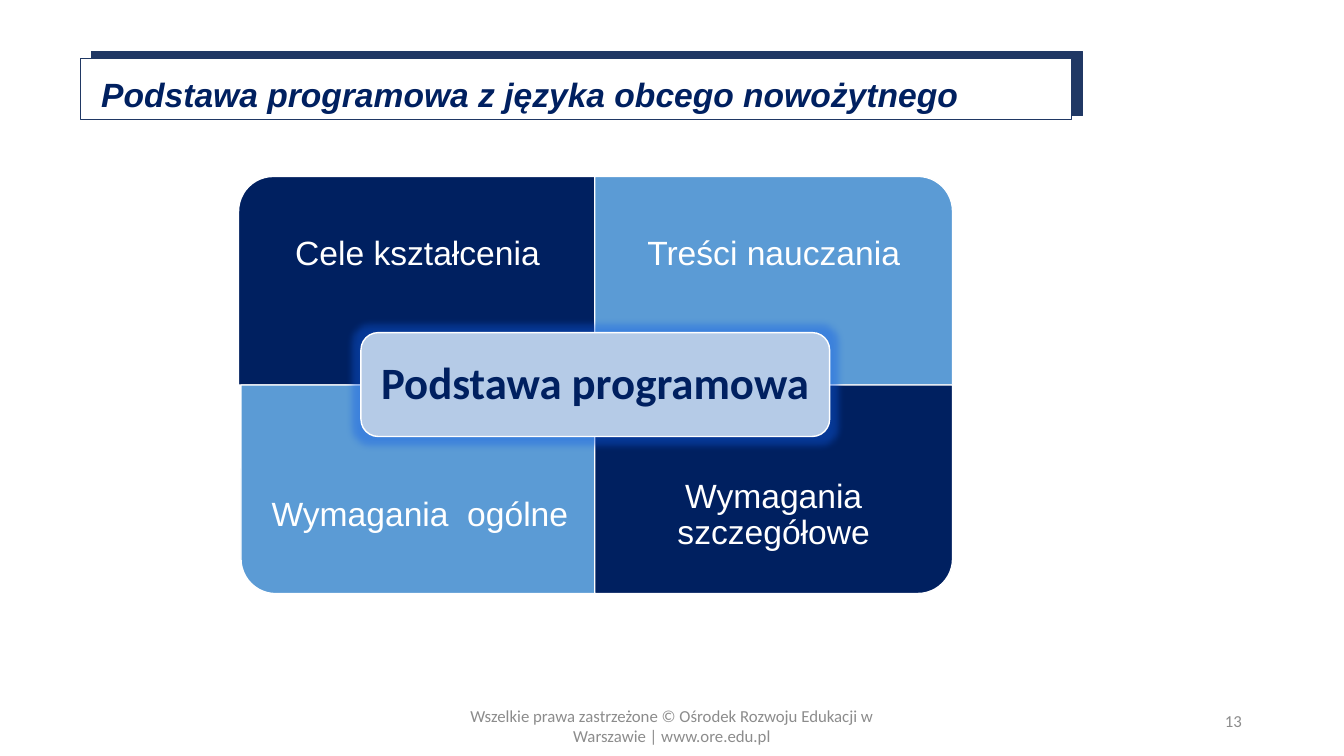
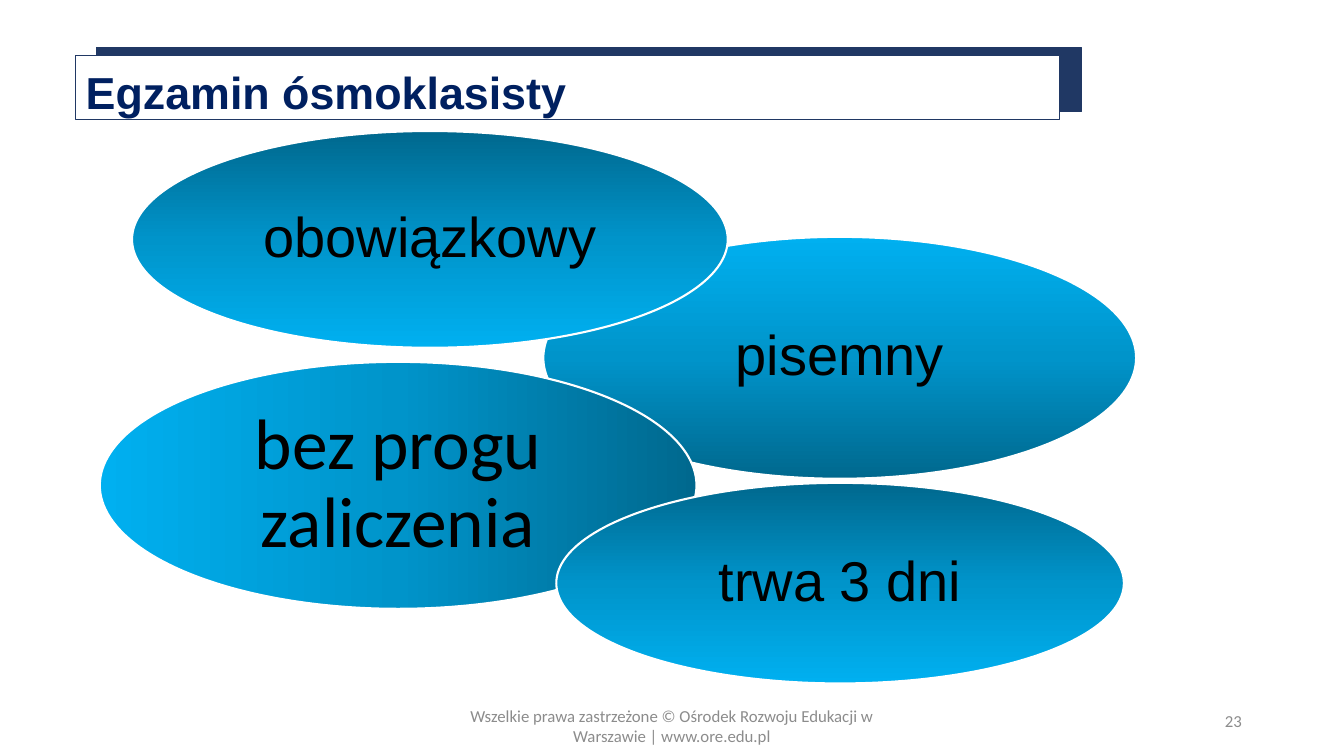
from copy import deepcopy
from dataclasses import dataclass

from lxml import etree
from pptx import Presentation
from pptx.dml.color import RGBColor
from pptx.enum.shapes import MSO_SHAPE
from pptx.enum.text import MSO_ANCHOR, MSO_AUTO_SIZE, PP_ALIGN
from pptx.oxml.ns import qn
from pptx.util import Pt


@dataclass(frozen=True)
class Theme:
    navy: str = "002060"
    band: str = "203864"
    blue: str = "5B9BD5"
    pale: str = "B5CBE7"
    glow: str = "0F5CE7"
    white: str = "FFFFFF"
    black: str = "000000"
    grey: str = "8C8C8C"
    gradient: tuple = ("00688E", "0094CA", "00B0F0")
    sans: str = "Arial"
    body: str = "Calibri"
    small: int = 12
    label: int = 24
    centre: int = 32
    oval: int = 40
    oval_large: int = 51


T = Theme()

# Content: boxes are (left, top, width, height) in points
FOOTER = "Wszelkie prawa zastrzeżone © Ośrodek Rozwoju Edukacji w Warszawie | www.ore.edu.pl"
FOOTER_BOX = (318, 500.4, 324, 28.8)
NUMBER_BOX = (678.2, 500.4, 216, 28.8)

CURRICULUM = {
    "title": "Podstawa programowa z języka obcego nowożytnego",
    "size": 24, "italic": True, "inset": (14.7, 11),
    "front": (57.6, 41.8, 707.8, 43.9), "back": (65.5, 36.7, 707.8, 46.1),
    "number": "13",
}
EXAM = {
    "title": "Egzamin ósmoklasisty",
    "size": 32, "italic": False, "inset": (7.2, 6.4),
    "front": (54, 39.6, 702.7, 46.1), "back": (69.1, 33.8, 703.4, 46.1),
    "number": "23",
}

# Quadrants: label, left, row, rotation, fill
QUADRANTS = [
    ("Cele kształcenia", 170.4, 0, 270, T.navy),
    ("Treści nauczania", 424.8, 0, 0, T.blue),
    ("Wymagania  ogólne", 172.1, 1, 180, T.blue),
    ("Wymagania szczegółowe", 424.8, 1, 90, T.navy),
]
QUAD_TOP, QUAD_W, QUAD_H = 126, 255.6, 149
CENTRE = ("Podstawa programowa", (257.8, 237.6, 334.8, 74.2))

# Ovals: text, box, gradient direction (clockwise), font, size
OVALS = [
    ("pisemny", (388.1, 169.2, 423.4, 172.8), 270, T.sans, T.oval),
    ("bez progu zaliczenia", (71.3, 258.5, 426.2, 176.4), 180, T.body, T.oval_large),
    ("obowiązkowy", (94.3, 93.6, 425.5, 154.8), 90, T.sans, T.oval),
    ("trwa 3 dni", (397.4, 344.9, 405.4, 143.3), 90, T.sans, T.oval),
]


def rgb(color):
    return RGBColor.from_string(color)


def points(box):
    return [Pt(v) for v in box]


def style(s, fill, line, width):
    s.fill.solid()
    s.fill.fore_color.rgb = rgb(fill)
    s.line.color.rgb = rgb(line)
    s.line.width = Pt(width)


def shape(slide, kind, box, fill, line=T.white, width=1.0):
    s = slide.shapes.add_shape(kind, *points(box))
    s.shadow.inherit = False
    style(s, fill, line, width)
    return s


def write(s, text, size, color, font=T.sans, bold=False, italic=False,
          align=PP_ALIGN.CENTER, anchor=MSO_ANCHOR.MIDDLE, inset=(7.2, 3.6), spacing=None):
    tf = s.text_frame
    tf.word_wrap = True
    tf.auto_size = MSO_AUTO_SIZE.NONE
    tf.vertical_anchor = anchor
    tf.margin_left = tf.margin_right = Pt(inset[0])
    tf.margin_top = tf.margin_bottom = Pt(inset[1])
    p = tf.paragraphs[0]
    p.alignment = align
    p.line_spacing = spacing
    r = p.add_run()
    r.text = text
    r.font.name, r.font.size = font, Pt(size)
    r.font.bold, r.font.italic = bold, italic
    r.font.color.rgb = rgb(color)


def textbox(slide, box, text, size, color, **options):
    write(slide.shapes.add_textbox(*points(box)), text, size, color, **options)


def add_slide(prs, page):
    """Slide with the shared title band, footer and number."""
    slide = prs.slides.add_slide(prs.slide_layouts[5])
    title = slide.shapes.title
    title.left, title.top, title.width, title.height = points(page["front"])
    style(title, T.white, T.band, 0.75)
    write(title, page["title"], page["size"], T.navy, bold=True, italic=page["italic"],
          align=PP_ALIGN.LEFT, anchor=MSO_ANCHOR.TOP, inset=page["inset"])
    back = shape(slide, MSO_SHAPE.RECTANGLE, page["back"], T.band, T.band, 0.75)
    title._element.addprevious(back._element)
    textbox(slide, NUMBER_BOX, page["number"], T.small, T.grey, font=T.body,
            align=PP_ALIGN.RIGHT)
    textbox(slide, FOOTER_BOX, FOOTER, T.small, T.grey, font=T.body,
            anchor=MSO_ANCHOR.TOP)
    return slide


def add_glow(s, color, radius, alpha):
    effects = s._element.spPr.find(qn("a:effectLst"))
    glow = etree.SubElement(effects, qn("a:glow"), rad=str(Pt(radius)))
    clr = etree.SubElement(glow, qn("a:srgbClr"), val=color)
    etree.SubElement(clr, qn("a:alpha"), val=str(alpha * 1000))


def set_gradient(s, colors, clockwise):
    s.fill.gradient()
    s.fill.gradient_angle = 360 - clockwise
    stops = s._element.spPr.find(".//" + qn("a:gsLst"))
    stops.insert(1, deepcopy(stops[0]))
    for i, (stop, color) in enumerate(zip(s.fill.gradient_stops, colors)):
        stop.position = i / (len(colors) - 1)
        stop.color.rgb = rgb(color)


def curriculum_slide(prs):
    slide = add_slide(prs, CURRICULUM)
    text_h = QUAD_H * 0.75
    for label, left, row, rotation, fill in QUADRANTS:
        top = QUAD_TOP + row * QUAD_H
        # A quarter turn swaps width and height about the same centre
        w, h = (QUAD_H, QUAD_W) if rotation % 180 else (QUAD_W, QUAD_H)
        box = (left + (QUAD_W - w) / 2, top + (QUAD_H - h) / 2, w, h)
        s = shape(slide, MSO_SHAPE.ROUND_1_RECTANGLE, box, fill)
        s.rotation = rotation
        text_top = top + row * (QUAD_H - text_h)
        textbox(slide, (left, text_top, QUAD_W, text_h), label, T.label, T.white,
                inset=(13.7, 13.7), spacing=0.9)
    # Glowing label over the crossing
    text, box = CENTRE
    s = shape(slide, MSO_SHAPE.ROUNDED_RECTANGLE, box, T.pale)
    add_glow(s, T.glow, 11, 40)
    write(s, text, T.centre, T.navy, font=T.body, bold=True, inset=(7, 7), spacing=0.9)


def exam_slide(prs):
    slide = add_slide(prs, EXAM)
    for text, box, direction, font, size in OVALS:
        s = shape(slide, MSO_SHAPE.OVAL, box, T.gradient[0], width=1.5)
        set_gradient(s, T.gradient, direction)
        write(s, text, size, T.black, font=font, inset=(4.5, 4.5), spacing=0.9)


def main():
    prs = Presentation()
    prs.slide_width, prs.slide_height = Pt(960), Pt(540)
    curriculum_slide(prs)
    exam_slide(prs)
    prs.save("out.pptx")


if __name__ == "__main__":
    main()
